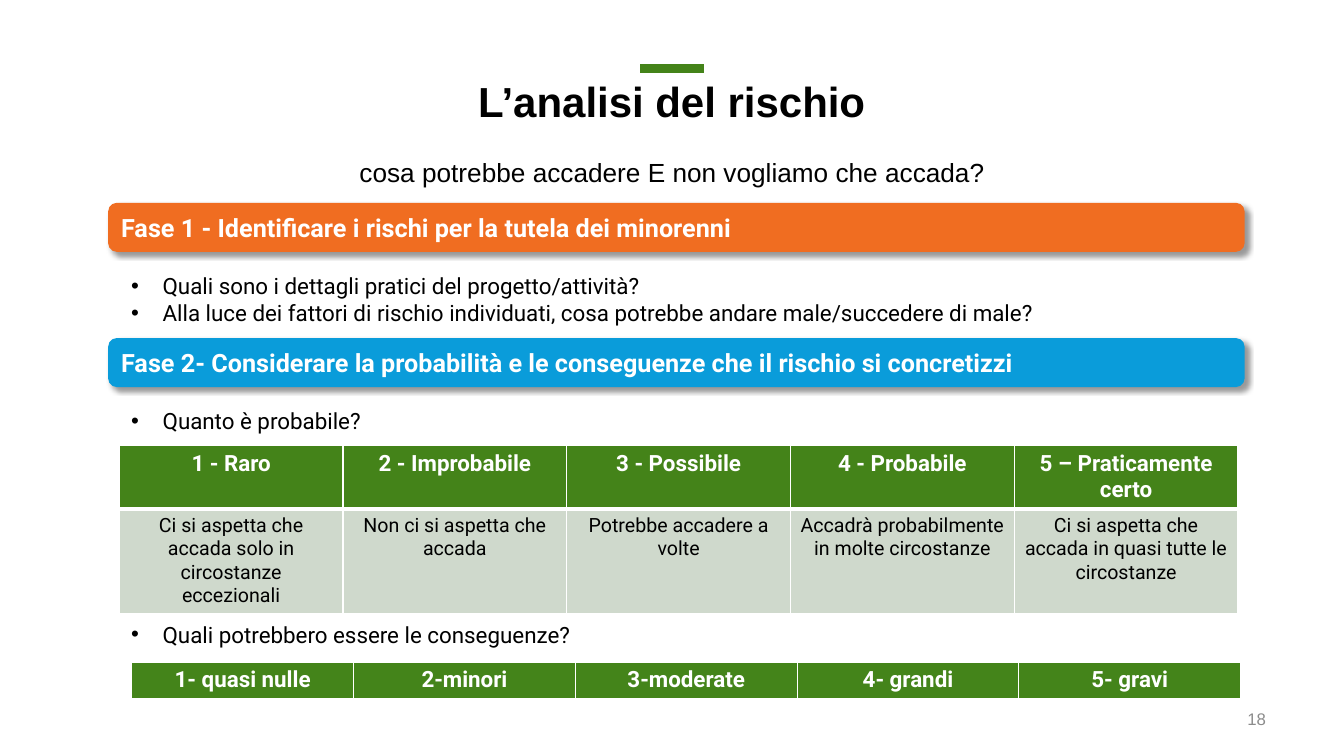
from lxml import etree
from pptx import Presentation
from pptx.dml.color import RGBColor
from pptx.enum.shapes import MSO_CONNECTOR, MSO_SHAPE
from pptx.enum.text import MSO_ANCHOR, MSO_AUTO_SIZE, PP_ALIGN
from pptx.oxml import parse_xml
from pptx.oxml.ns import nsdecls, qn
from pptx.util import Pt

CENTER, LEFT, RIGHT = PP_ALIGN.CENTER, PP_ALIGN.LEFT, PP_ALIGN.RIGHT
TOP, MIDDLE = MSO_ANCHOR.TOP, MSO_ANCHOR.MIDDLE
FIT_SHAPE, NO_FIT = MSO_AUTO_SIZE.SHAPE_TO_FIT_TEXT, MSO_AUTO_SIZE.NONE
STRAIGHT, ROUNDED = MSO_CONNECTOR.STRAIGHT, MSO_SHAPE.ROUNDED_RECTANGLE

BLACK = RGBColor(0x00, 0x00, 0x00)
WHITE = RGBColor(0xFF, 0xFF, 0xFF)
GREY = RGBColor(0x8C, 0x8C, 0x8C)
GREEN = RGBColor(0x44, 0x83, 0x19)
LEAF_GREEN = RGBColor(0x44, 0x84, 0x1A)
PALE_GREEN = RGBColor(0xCF, 0xD9, 0xCC)
ORANGE = RGBColor(0xF0, 0x6D, 0x21)
BLUE = RGBColor(0x0A, 0x9C, 0xDA)

LIKELIHOOD = [
    ["1 - Raro", "2 - Improbabile", "3 - Possibile", "4 - Probabile",
     "5 – Praticamente certo"],
    ["Ci si aspetta che accada solo in circostanze eccezionali",
     "Non ci si aspetta che accada",
     "Potrebbe accadere a volte",
     "Accadrà probabilmente in molte circostanze",
     "Ci si aspetta che accada in quasi tutte le circostanze"],
]
CONSEQUENCES = [["1- quasi nulle", "2-minori", "3-moderate", "4- grandi", "5- gravi"]]


def style(paragraph, size, color, font="Roboto", bold=False, align=LEFT):
    paragraph.alignment = align
    paragraph.font.size = Pt(size)
    paragraph.font.name = font
    paragraph.font.bold = bold
    paragraph.font.color.rgb = color


def place(shape, left, top, width, height):
    shape.left, shape.top = Pt(left), Pt(top)
    shape.width, shape.height = Pt(width), Pt(height)


def add_accent(slide):
    accent = slide.shapes.add_connector(STRAIGHT, Pt(457.2), Pt(49), Pt(502.8), Pt(49))
    accent.line.color.rgb = GREEN
    accent.line.width = Pt(6)
    etree.SubElement(accent._element.spPr, qn("a:effectLst"))


def fill_heading(heading, text, box, size, spacing, bold, fit):
    place(heading, *box)
    frame = heading.text_frame
    frame.text = text
    frame.vertical_anchor = TOP
    frame.auto_size = fit
    paragraph = frame.paragraphs[0]
    paragraph.line_spacing = spacing
    paragraph.space_before = Pt(0)
    style(paragraph, size, BLACK, "Arial", bold, CENTER)
    return frame


def add_phase(slide, text, top, color):
    banner = slide.shapes.add_shape(ROUNDED, Pt(77.8), Pt(top), Pt(810.7), Pt(34))
    banner.fill.solid()
    banner.fill.fore_color.rgb = color
    banner.line.color.rgb = color
    banner.line.width = Pt(1)
    # Soft shadow to the lower right
    banner.shadow.inherit = False
    banner._element.spPr.find(qn("a:effectLst")).append(parse_xml(
        f'<a:outerShdw {nsdecls("a")} blurRad="{Pt(4)}" dist="{Pt(3)}" dir="2700000" '
        'algn="tl" rotWithShape="0"><a:srgbClr val="000000">'
        '<a:alpha val="40000"/></a:srgbClr></a:outerShdw>'))
    frame = banner.text_frame
    frame.text = text
    frame.vertical_anchor = MIDDLE
    style(frame.paragraphs[0], 18, WHITE, bold=True)


def add_questions(slide, questions, top, width, height):
    box = slide.shapes.add_textbox(Pt(86.6), Pt(top), Pt(width), Pt(height))
    frame = box.text_frame
    frame.word_wrap = True
    frame.auto_size = FIT_SHAPE
    frame.text = "\n".join(questions)
    for paragraph in frame.paragraphs:
        properties = paragraph._p.get_or_add_pPr()
        properties.set("marL", str(Pt(22.5)))
        properties.set("indent", str(Pt(-22.5)))
        etree.SubElement(properties, qn("a:buFont"), typeface="Arial")
        etree.SubElement(properties, qn("a:buChar"), char="•")
        style(paragraph, 16, BLACK)


def set_borders(cell, bottom):
    properties = cell._tc.get_or_add_tcPr()
    for index, (side, width) in enumerate(zip("LRTB", (1, 1, 1, bottom))):
        properties.insert(index, parse_xml(
            f'<a:ln{side} {nsdecls("a")} w="{Pt(width)}"><a:solidFill>'
            f'<a:srgbClr val="{WHITE}"/></a:solidFill></a:ln{side}>'))


def add_scale(slide, rows, left, top, column_width, row_heights, header_color):
    columns = len(rows[0])
    scale = slide.shapes.add_table(
        len(rows), columns, Pt(left), Pt(top),
        Pt(column_width * columns), Pt(sum(row_heights))).table
    for column in scale.columns:
        column.width = Pt(column_width)
    for r, (texts, height) in enumerate(zip(rows, row_heights)):
        header = r == 0
        scale.rows[r].height = Pt(height)
        for c, text in enumerate(texts):
            cell = scale.cell(r, c)
            cell.text = text
            cell.fill.solid()
            cell.fill.fore_color.rgb = header_color if header else PALE_GREEN
            set_borders(cell, 3 if header else 1)
            style(cell.text_frame.paragraphs[0], 16 if header else 14,
                  WHITE if header else BLACK, bold=header, align=CENTER)


def add_page_number(slide, number):
    box = slide.shapes.add_textbox(Pt(860.4), Pt(502.6), Pt(51), Pt(22.3))
    frame = box.text_frame
    frame.word_wrap = True
    frame.vertical_anchor = MIDDLE
    frame.text = number
    style(frame.paragraphs[0], 12, GREY, "Arial", align=RIGHT)


def main():
    deck = Presentation()
    deck.slide_width, deck.slide_height = Pt(960), Pt(540)
    slide = deck.slides.add_slide(deck.slide_layouts[1])

    # Heading
    add_accent(slide)
    fill_heading(slide.shapes.title, "L’analisi del rischio",
                 (49, 54.7, 862, 45.4), 30, 0.9, True, NO_FIT)
    subtitle = fill_heading(slide.placeholders[1],
                            "cosa potrebbe accadere E non vogliamo che accada?",
                            (49, 100.1, 862, 41), 18.7, 1.14, False, FIT_SHAPE)
    subtitle.margin_top = subtitle.margin_bottom = Pt(8.6)
    subtitle.paragraphs[0].space_after = Pt(5)
    properties = subtitle.paragraphs[0]._p.get_or_add_pPr()
    properties.set("marL", "0")
    properties.set("indent", "0")
    etree.SubElement(properties, qn("a:buNone"))

    # Phase 1: identify the risks
    add_phase(slide, "Fase 1 - Identificare i rischi per la tutela dei minorenni",
              145.4, ORANGE)
    add_questions(slide, [
        "Quali sono i dettagli pratici del progetto/attività?",
        "Alla luce dei fattori di rischio individuati, cosa potrebbe andare "
        "male/succedere di male?"], 190.8, 767.5, 46)

    # Phase 2: likelihood and consequences
    add_phase(slide, "Fase 2- Considerare la probabilità e le conseguenze che il "
              "rischio si concretizzi", 242, BLUE)
    add_questions(slide, ["Quanto è probabile?"], 287.3, 558, 26.6)
    add_scale(slide, LIKELIHOOD, 85.2, 318.2, 159.84, (18, 67), GREEN)
    add_questions(slide, ["Quali potrebbero essere le conseguenze?"], 440, 476, 26.6)
    add_scale(slide, CONSEQUENCES, 94.2, 473, 158.4, (26.6,), LEAF_GREEN)

    add_page_number(slide, "18")
    deck.save("out.pptx")


if __name__ == "__main__":
    main()
